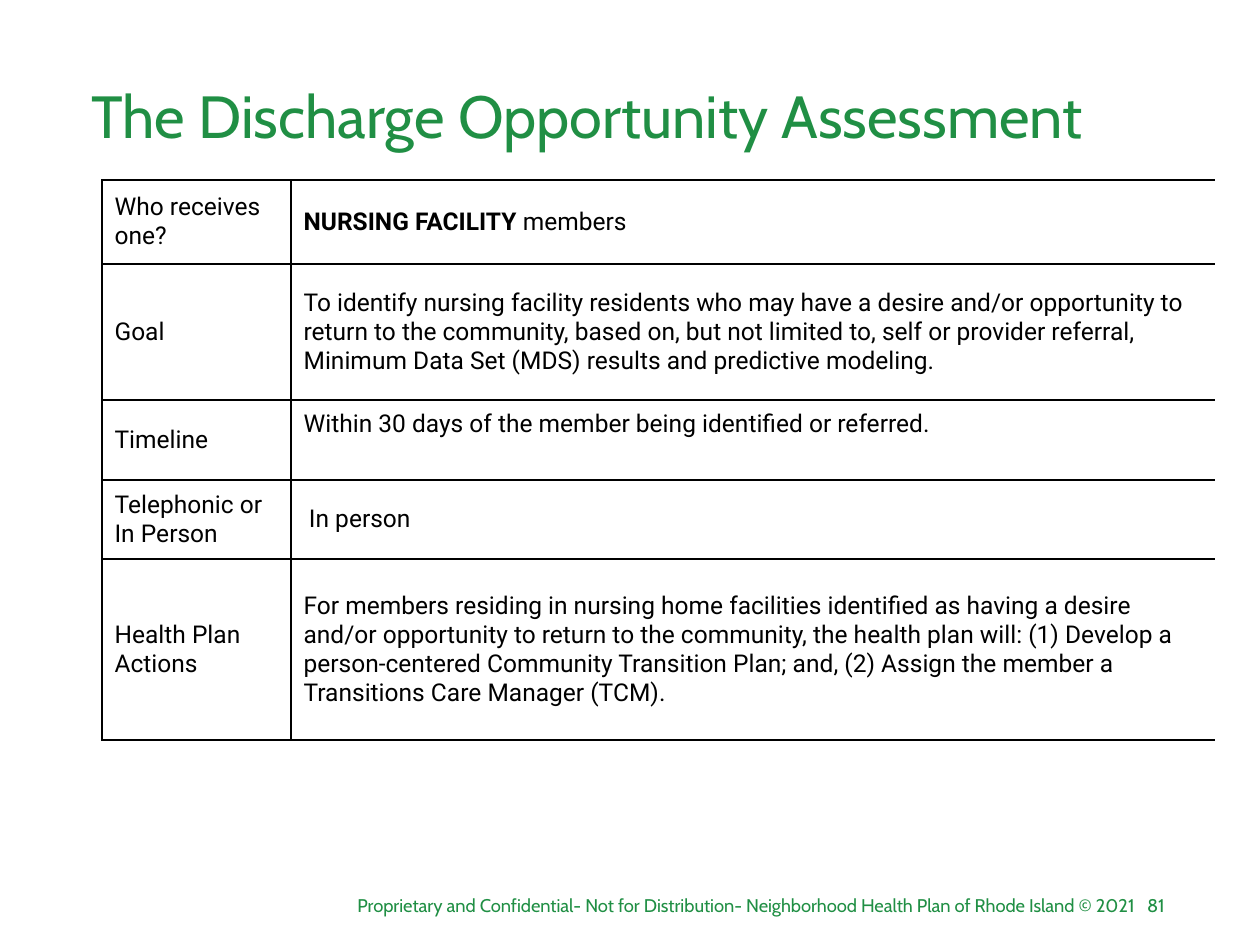
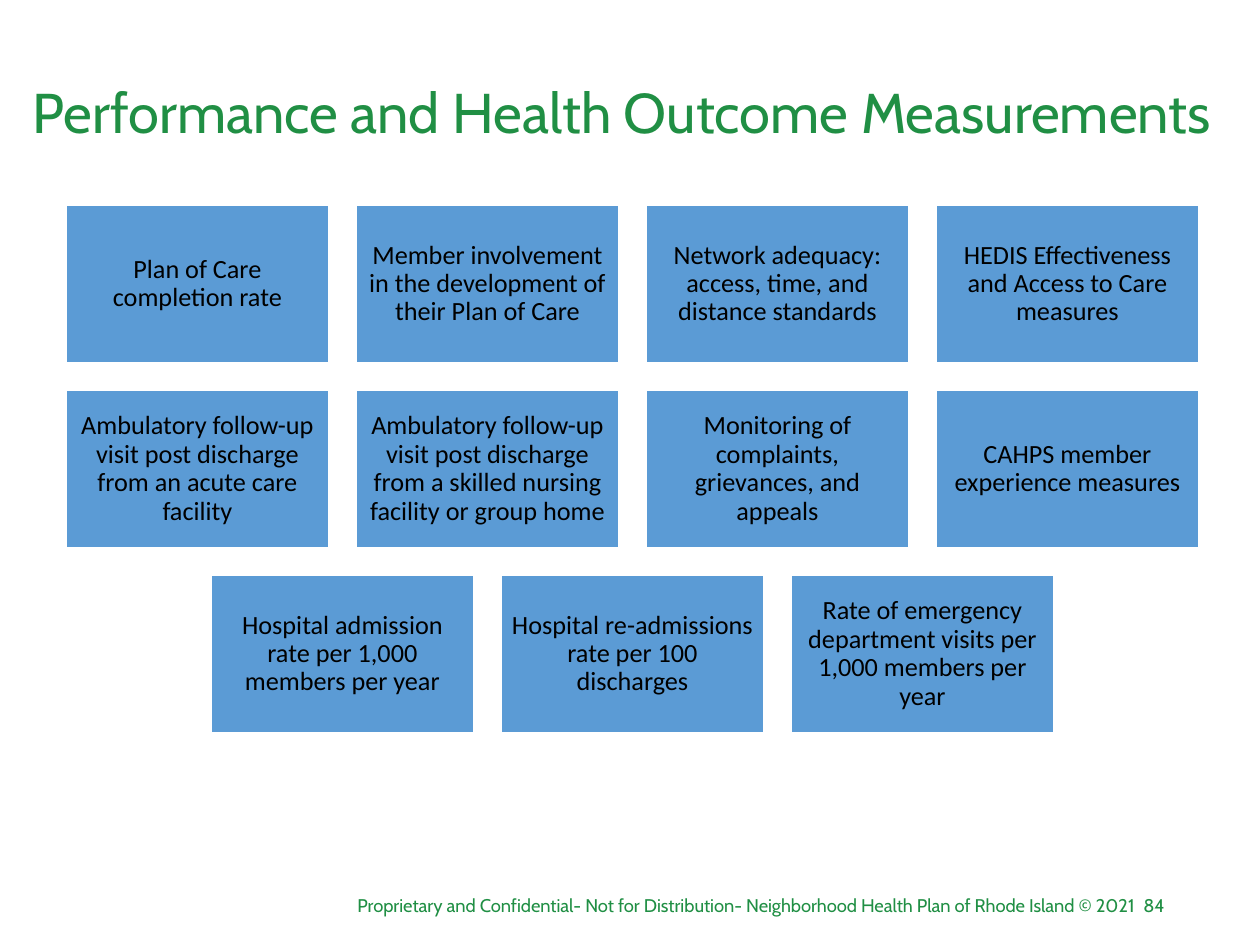
from dataclasses import dataclass

from lxml import etree
from pptx import Presentation
from pptx.dml.color import RGBColor
from pptx.enum.shapes import MSO_SHAPE
from pptx.enum.text import MSO_ANCHOR, PP_ALIGN
from pptx.oxml.ns import qn
from pptx.util import Emu, Pt

RECTANGLE = MSO_SHAPE.RECTANGLE
TOP, MIDDLE = MSO_ANCHOR.TOP, MSO_ANCHOR.MIDDLE
LEFT, CENTER, RIGHT = PP_ALIGN.LEFT, PP_ALIGN.CENTER, PP_ALIGN.RIGHT
EMU_PER_PX = 914400 / 126


@dataclass(frozen=True)
class TextStyle:
    font: str
    size: float
    color: str


@dataclass(frozen=True)
class Theme:
    background: str = "FFFFFF"
    card_fill: str = "5B9BD5"
    border: str = "000000"
    border_width: int = 1
    line_spacing: float = 0.9
    wide_title: TextStyle = TextStyle("Cabin", 32, "208F44")
    title: TextStyle = TextStyle("Cabin", 34, "208F44")
    footer: TextStyle = TextStyle("Cabin", 10.5, "208F44")
    table: TextStyle = TextStyle("Roboto", 14, "000000")
    card: TextStyle = TextStyle("Calibri", 15, "000000")


THEME = Theme()

FOOTER = (
    "Proprietary and Confidential- Not for Distribution- "
    "Neighborhood Health Plan of Rhode Island © 2021"
)

COLUMN_WIDTHS = [189, 924]
ROW_HEIGHTS = [84, 136, 80, 79, 181]
ASSESSMENT_ROWS = [
    ("Who receives one?", "NURSING FACILITY members"),
    (
        "Goal",
        "To identify nursing facility residents who may have a desire and/or "
        "opportunity to return to the community, based on, but not limited to, "
        "self or provider referral, Minimum Data Set (MDS) results and "
        "predictive modeling.",
    ),
    ("Timeline", "Within 30 days of the member being identified or referred."),
    ("Telephonic or In Person", "In person"),
    (
        "Health Plan Actions",
        "For members residing in nursing home facilities identified as having "
        "a desire and/or opportunity to return to the community, the health plan "
        "will: (1) Develop a person-centered Community Transition Plan; and, "
        "(2) Assign the member a Transitions Care Manager (TCM).",
    ),
]
BOLD_LEAD = "NURSING FACILITY"
TIMELINE_ROW, PERSON_ROW = 2, 3

MEASURES = [
    "Plan of Care completion rate",
    "Member involvement in the development of their Plan of Care",
    "Network adequacy: access, time, and distance standards",
    "HEDIS Effectiveness and Access to Care measures",
    "Ambulatory follow-up visit post discharge from an acute care facility",
    "Ambulatory follow-up visit post discharge from a skilled nursing "
    "facility or group home",
    "Monitoring of complaints, grievances, and appeals",
    "CAHPS member experience measures",
    "Hospital admission rate per 1,000 members per year",
    "Hospital re-admissions rate per 100 discharges",
    "Rate of emergency department visits per 1,000 members per year",
]
CARDS_PER_ROW = 4
CARD_LEFT, CARD_TOP = 66, 205
CARD_WIDTH, CARD_HEIGHT, CARD_GAP = 263, 158, 27
CARD_INSET = 8


def px(value):
    return Emu(round(value * EMU_PER_PX))


def color(value):
    return RGBColor.from_string(value)


def format_text(text_frame, style, alignment=LEFT, line_spacing=None):
    for paragraph in text_frame.paragraphs:
        paragraph.alignment = alignment
        paragraph.line_spacing = line_spacing
        for run in paragraph.runs:
            run.font.name = style.font
            run.font.size = Pt(style.size)
            run.font.color.rgb = color(style.color)


def add_text(slide, text, box, style, alignment, anchor=TOP, line_spacing=None):
    shape = slide.shapes.add_textbox(*map(px, box))
    text_frame = shape.text_frame
    text_frame.word_wrap = True
    text_frame.vertical_anchor = anchor
    text_frame.text = text
    format_text(text_frame, style, alignment, line_spacing)


def add_title(slide, text, box, style, alignment):
    add_text(slide, text, box, style, alignment, MIDDLE, THEME.line_spacing)


def add_base_slide(presentation, number):
    slide = presentation.slides.add_slide(presentation.slide_layouts[6])
    slide.background.fill.solid()
    slide.background.fill.fore_color.rgb = color(THEME.background)
    add_text(slide, str(number), (1119, 888, 58, 35), THEME.footer, RIGHT)
    add_text(slide, FOOTER, (315, 888, 833, 35), THEME.footer, RIGHT)
    return slide


def set_borders(cell, visible_sides):
    properties = cell._tc.get_or_add_tcPr()
    for side in "LRTB":
        line = etree.SubElement(properties, qn(f"a:ln{side}"))
        line.set("w", str(Pt(THEME.border_width)))
        if side in visible_sides:
            fill = etree.SubElement(line, qn("a:solidFill"))
            etree.SubElement(fill, qn("a:srgbClr")).set("val", THEME.border)
        else:
            etree.SubElement(line, qn("a:noFill"))


def fill_cell(cell, text, visible_sides):
    set_borders(cell, visible_sides)
    cell.fill.background()
    cell.vertical_anchor = MIDDLE
    cell.text_frame.text = text
    if text.startswith(BOLD_LEAD):
        paragraph = cell.text_frame.paragraphs[0]
        paragraph.runs[0].text = BOLD_LEAD
        paragraph.runs[0].font.bold = True
        paragraph.add_run().text = text[len(BOLD_LEAD):]
    format_text(cell.text_frame, THEME.table)


def add_assessment_table(slide):
    frame = slide.shapes.add_table(
        len(ROW_HEIGHTS), len(COLUMN_WIDTHS), px(102), px(180),
        px(sum(COLUMN_WIDTHS)), px(sum(ROW_HEIGHTS)),
    )
    table = frame.table
    table.first_row = False
    table.horz_banding = False
    for column, width in zip(table.columns, COLUMN_WIDTHS):
        column.width = px(width)
    for row, height, (label, detail) in zip(table.rows, ROW_HEIGHTS, ASSESSMENT_ROWS):
        row.height = px(height)
        fill_cell(row.cells[0], label, "LRTB")
        fill_cell(row.cells[1], detail, "LTB")
    timeline = table.cell(TIMELINE_ROW, 1)
    timeline.vertical_anchor = TOP
    timeline.margin_top = px(10)
    table.cell(PERSON_ROW, 1).margin_left = px(18)


def add_card(slide, text, left, top):
    shape = slide.shapes.add_shape(
        RECTANGLE, px(left), px(top), px(CARD_WIDTH), px(CARD_HEIGHT)
    )
    shape.shadow.inherit = False
    shape.fill.solid()
    shape.fill.fore_color.rgb = color(THEME.card_fill)
    shape.line.color.rgb = color(THEME.background)
    shape.line.width = Pt(THEME.border_width)
    text_frame = shape.text_frame
    text_frame.word_wrap = True
    text_frame.vertical_anchor = MIDDLE
    text_frame.margin_left = text_frame.margin_right = px(CARD_INSET)
    text_frame.margin_top = text_frame.margin_bottom = px(CARD_INSET)
    text_frame.text = text
    format_text(text_frame, THEME.card, CENTER, THEME.line_spacing)


def add_measure_cards(slide):
    column_step = CARD_WIDTH + CARD_GAP
    row_step = CARD_HEIGHT + CARD_GAP
    for start in range(0, len(MEASURES), CARDS_PER_ROW):
        row_measures = MEASURES[start:start + CARDS_PER_ROW]
        left = CARD_LEFT + (CARDS_PER_ROW - len(row_measures)) * column_step // 2
        top = CARD_TOP + start // CARDS_PER_ROW * row_step
        for column, measure in enumerate(row_measures):
            add_card(slide, measure, left + column * column_step, top)


def build_assessment_slide(presentation):
    slide = add_base_slide(presentation, 81)
    add_title(slide, "The Discharge Opportunity Assessment",
              (44, 28, 1086, 183), THEME.title, CENTER)
    add_assessment_table(slide)


def build_measurements_slide(presentation):
    slide = add_base_slide(presentation, 84)
    add_title(slide, "Performance and Health Outcome Measurements",
              (20, 47, 1225, 136), THEME.wide_title, LEFT)
    add_measure_cards(slide)


def main():
    presentation = Presentation()
    presentation.slide_width = px(1260)
    presentation.slide_height = px(945)
    build_assessment_slide(presentation)
    build_measurements_slide(presentation)
    presentation.save("out.pptx")


if __name__ == "__main__":
    main()
